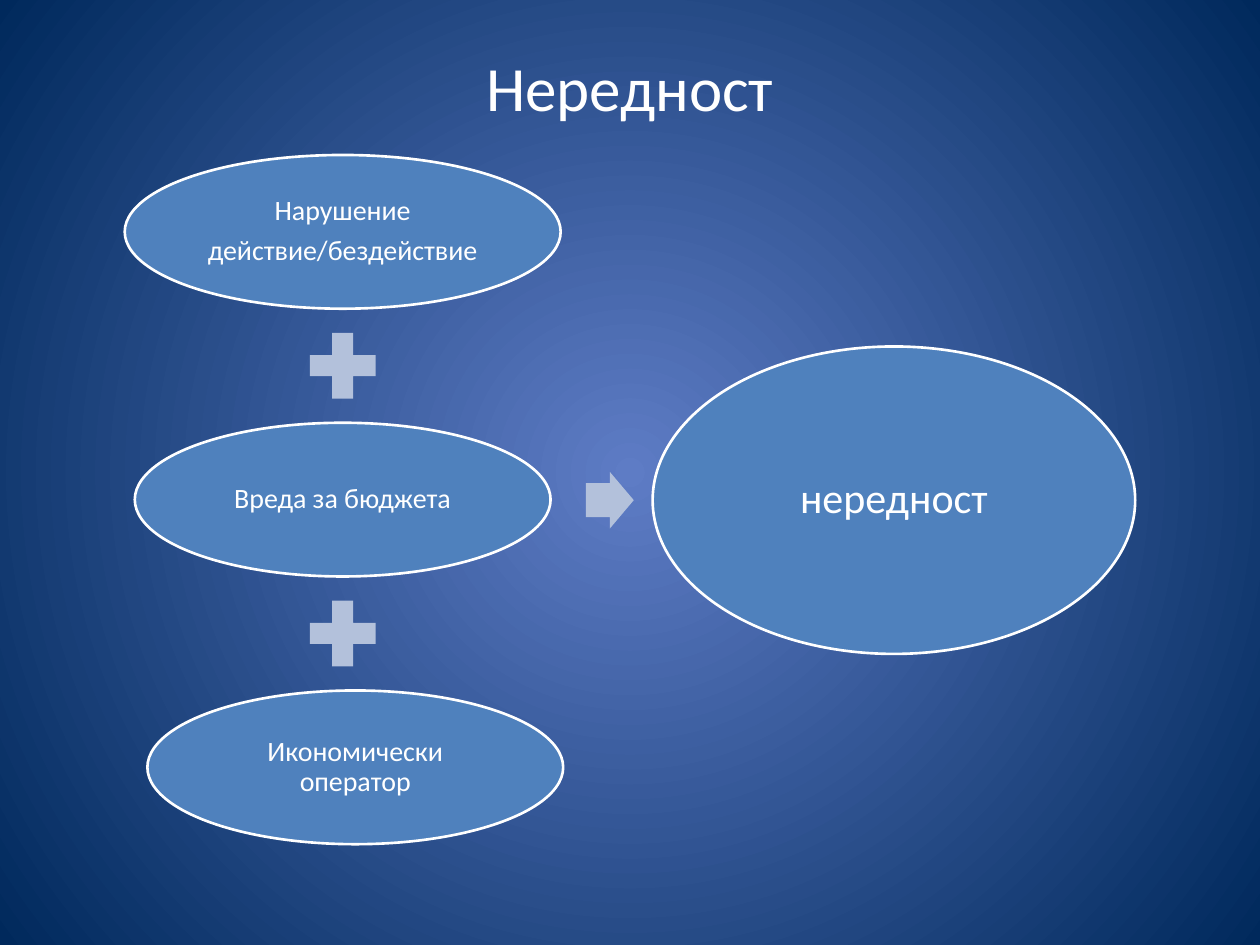
from lxml.etree import SubElement
from pptx import Presentation
from pptx.dml.color import RGBColor
from pptx.enum.shapes import MSO_SHAPE
from pptx.enum.text import MSO_ANCHOR, PP_ALIGN
from pptx.oxml.ns import qn
from pptx.util import Inches, Pt

WHITE = RGBColor(0xFF, 0xFF, 0xFF)
OVAL_BLUE = RGBColor(0x4F, 0x81, 0xBD)
SIGN_BLUE = RGBColor(0xB3, 0xC1, 0xDB)
GLOW_BLUE = RGBColor(0x5E, 0x7C, 0xC5)
EDGE_BLUE = RGBColor(0x00, 0x29, 0x5C)

# Conditions: lines of text, centre x, width
CONDITIONS = [
    (["Нарушение", "действие/бездействие"], 2.72, 3.46),
    (["Вреда за бюджета"], 2.72, 3.3),
    (["Икономически оператор"], 2.82, 3.3),
]


def write_text(frame, lines, size, inset=None, spacing=None, after=None):
    frame.word_wrap = True
    frame.vertical_anchor = MSO_ANCHOR.MIDDLE
    if inset is not None:
        frame.margin_left = frame.margin_right = Inches(inset)
        frame.margin_top = frame.margin_bottom = Inches(inset)
    for index, line in enumerate(lines):
        para = frame.add_paragraph() if index else frame.paragraphs[0]
        para.alignment = PP_ALIGN.CENTER
        para.line_spacing = spacing
        para.space_after = after
        span = para.add_run()
        span.text = line
        span.font.name = "Calibri"
        span.font.size = Pt(size)
        span.font.color.rgb = WHITE


def add_centred(shapes, kind, center_x, center_y, width, height, color):
    shape = shapes.add_shape(
        kind, Inches(center_x - width / 2), Inches(center_y - height / 2),
        Inches(width), Inches(height))
    shape.shadow.inherit = False
    shape.fill.solid()
    shape.fill.fore_color.rgb = color
    shape.line.fill.background()
    return shape


def add_oval(shapes, lines, center_x, center_y, width, height, size, inset):
    oval = add_centred(shapes, MSO_SHAPE.OVAL, center_x, center_y, width, height, OVAL_BLUE)
    oval.line.color.rgb = WHITE
    oval.line.width = Pt(1.5)
    write_text(oval.text_frame, lines, size, inset=inset, spacing=0.9, after=Pt(0.35 * size))


def paint_background(page):
    fill = page.background.fill
    fill.gradient()
    for stop, position, color in zip(fill.gradient_stops, (0, 1), (GLOW_BLUE, EDGE_BLUE)):
        stop.position = position
        stop.color.rgb = color
    # Turn the linear gradient into a circular one from the centre
    gradient = page.element.find(".//" + qn("a:gradFill"))
    gradient.remove(gradient.find(qn("a:lin")))
    circle = SubElement(gradient, qn("a:path"), path="circle")
    SubElement(circle, qn("a:fillToRect"), l="50000", t="50000", r="50000", b="50000")


def place_title(title, left, top, width, height):
    title.left, title.top = Inches(left), Inches(top)
    title.width, title.height = Inches(width), Inches(height)
    write_text(title.text_frame, ["Нередност"], 36)


def add_conditions(shapes, top, height, oval_height=1.22, sign_x=2.72):
    pitch = (height - oval_height) / (len(CONDITIONS) - 1)
    for index, (lines, center_x, width) in enumerate(CONDITIONS):
        center_y = top + oval_height / 2 + index * pitch
        if index:
            add_centred(shapes, MSO_SHAPE.MATH_PLUS, sign_x, center_y - pitch / 2,
                        0.71, 0.71, SIGN_BLUE)
        add_oval(shapes, lines, center_x, center_y, width, oval_height, 16, 0.02)


def add_result(shapes, left, center_y, width, height):
    arrow = add_centred(shapes, MSO_SHAPE.RIGHT_ARROW, left - 0.34, center_y,
                        0.38, 0.45, SIGN_BLUE)
    arrow.adjustments[0], arrow.adjustments[1] = 0.6, 0.5
    add_oval(shapes, ["нередност"], left + width / 2, center_y, width, height, 24, 0.03)


def main():
    deck = Presentation()
    deck.slide_width, deck.slide_height = Inches(10), Inches(7.5)
    page = deck.slides.add_slide(deck.slide_layouts[5])
    paint_background(page)
    place_title(page.shapes.title, 0.5, 0.3, 9, 0.77)
    # Diagram: the conditions add up to the result
    diagram = page.shapes.add_group_shape().shapes
    add_conditions(diagram, 1.23, 5.47)
    add_result(diagram, 5.18, 3.97, 3.83, 2.44)
    deck.save("out.pptx")


if __name__ == "__main__":
    main()
